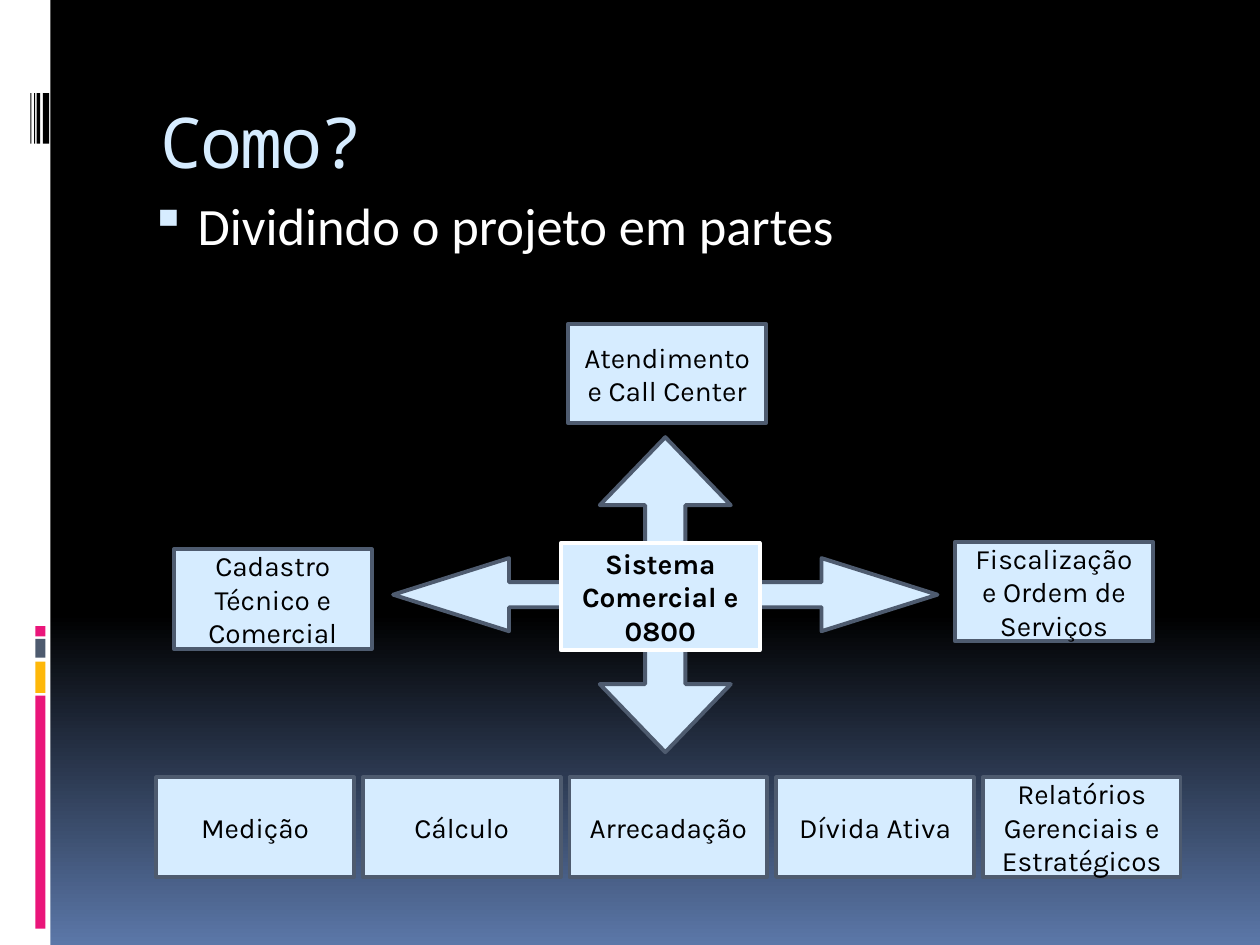
from dataclasses import dataclass
from lxml import etree
from pptx import Presentation
from pptx.dml.color import RGBColor
from pptx.enum import shapes, text
from pptx.oxml import ns
from pptx.util import Inches, Pt


@dataclass(frozen=True)
class Theme:
    black: str = "000000"
    white: str = "FFFFFF"
    blue: str = "5B77A8"
    pale: str = "D6ECFF"
    slate: str = "4E5B6F"
    pink: str = "EA157A"
    gold: str = "FEB80A"
    head: int = 40
    body: int = 30
    label: int = 16
    edge: float = 2.25


theme = Theme()


def paint(shape, fill, line=None):
    shape.shadow.inherit = False
    shape.fill.solid()
    shape.fill.fore_color.rgb = RGBColor.from_string(fill)
    if line:
        shape.line.color.rgb = RGBColor.from_string(line)
        shape.line.width = Pt(theme.edge)
    else:
        shape.line.fill.background()


def write(shape, words, face, size, color, align, anchor):
    frame = shape.text_frame
    frame.word_wrap = True
    frame.vertical_anchor = anchor
    frame.text = words
    para = frame.paragraphs[0]
    para.alignment = align
    para.font.name = face
    para.font.size = Pt(size)
    para.font.color.rgb = RGBColor.from_string(color)
    return para


deck = Presentation()
deck.slide_width, deck.slide_height = Inches(10), Inches(7.5)
slide = deck.slides.add_slide(deck.slide_layouts[5])
rect = shapes.MSO_SHAPE.RECTANGLE
left, mid = text.PP_ALIGN.LEFT, text.PP_ALIGN.CENTER
top, center = text.MSO_ANCHOR.TOP, text.MSO_ANCHOR.MIDDLE

back = slide.background.fill
back.gradient()
back.gradient_angle = 270
for stop, (place, color) in zip(back.gradient_stops, [(0.65, theme.black), (1, theme.blue)]):
    stop.position = place
    stop.color.rgb = RGBColor.from_string(color)

bars = [
    (0, 0, 0.4, 7.5, theme.white),
    (0.28, 5.52, 0.08, 1.85, theme.pink),
    (0.28, 5.25, 0.08, 0.25, theme.gold),
    (0.28, 5.07, 0.08, 0.15, theme.slate),
    (0.28, 4.97, 0.08, 0.08, theme.pink),
]
for x, width in [(0.34, 0.05), (0.29, 0.03), (0.27, 0.01), (0.24, 0.01)]:
    bars.append((x, 0.74, width, 0.4, theme.black))
for *box, color in bars:
    paint(slide.shapes.add_shape(rect, *map(Inches, box)), color)

title = slide.shapes.title
title.left, title.top = Inches(1.17), Inches(0.73)
title.width, title.height = Inches(8.5), Inches(1)
para = write(title, "Como?", "Noto Sans Mono", theme.head, theme.pale, left, top)
para.runs[0].font._element.set("spc", "-100")

body = slide.shapes.add_textbox(Inches(1.02), Inches(1.48), Inches(6.48), Inches(1.48))
para = write(body, "Dividindo o projeto em partes", "Calibri", theme.body, theme.white, left, top)
para.space_before = Pt(7)
props = para._p.get_or_add_pPr()
props.set("marL", str(Inches(0.45)))
props.set("indent", str(Inches(-0.38)))
tint = etree.Element(ns.qn("a:buClr"))
etree.SubElement(tint, ns.qn("a:srgbClr"), val=theme.pale)
size = etree.Element(ns.qn("a:buSzPct"), val="95000")
mark = etree.Element(ns.qn("a:buChar"), char="▪")
spot = props.index(props.find(ns.qn("a:spcBef"))) + 1
for step, item in enumerate([tint, size, mark]):
    props.insert(spot + step, item)

arm = [(0, 1.25), (0.52, 0.71), (0.16, 0.71), (0.16, 0.1), (1.24, 0.1), (1.24, 0.29), (2.16, 0)]
points = []
for right, down, part in [(1, -1, arm[:-1]), (1, 1, arm[:0:-1]), (-1, 1, arm[:-1]), (-1, -1, arm[:0:-1])]:
    points += [(Inches(5.28 + right * x), Inches(4.72 + down * y)) for x, y in part]
pen = slide.shapes.build_freeform(*points[0])
pen.add_line_segments(points[1:], close=True)
paint(pen.convert_to_shape(), theme.pale, theme.slate)

boxes = [
    (4.51, 2.57, "Atendimento e Call Center"),
    (1.38, 4.36, "Cadastro Técnico e Comercial"),
    (7.58, 4.3, "Fiscalização e Ordem de Serviços"),
]
row = ["Medição", "Cálculo", "Arrecadação", "Dívida Ativa", "Relatórios Gerenciais e Estratégicos"]
boxes += [(1.24 + 1.64 * i, 6.17, words) for i, words in enumerate(row)]
for x, y, words in boxes:
    box = slide.shapes.add_shape(rect, Inches(x), Inches(y), Inches(1.57), Inches(0.79))
    paint(box, theme.pale, theme.slate)
    write(box, words, "Karla", theme.label, theme.black, mid, center)

core = slide.shapes.add_shape(rect, Inches(4.45), Inches(4.31), Inches(1.58), Inches(0.85))
paint(core, theme.pale, theme.white)
para = write(core, "Sistema Comercial e 0800", "Karla", theme.label, theme.black, mid, center)
para.font.bold = True

deck.save("out.pptx")
